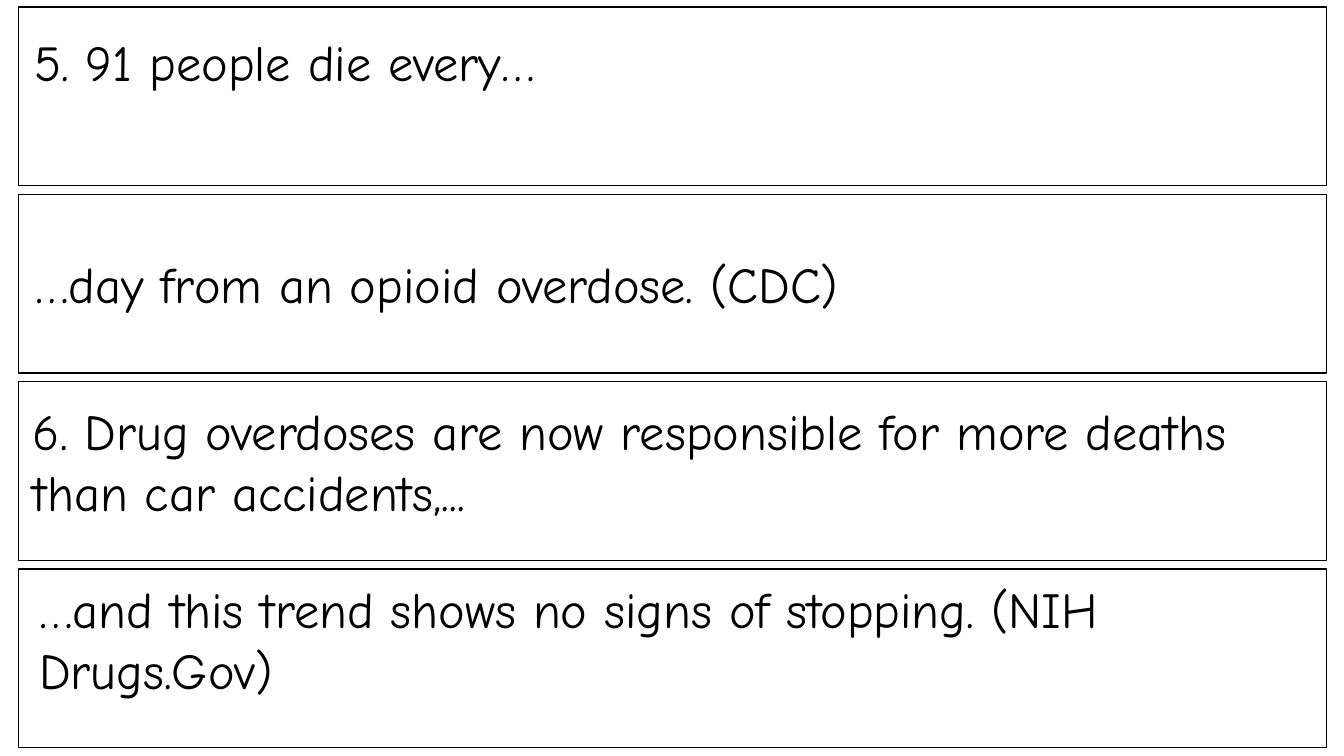
"""Build a slide of four framed fact strips to cut out and match."""
from pptx import Presentation
from pptx.dml.color import RGBColor
from pptx.enum.shapes import MSO_SHAPE
from pptx.enum.text import MSO_AUTO_SIZE
from pptx.util import Cm, Pt

RECT = MSO_SHAPE.RECTANGLE
GROW = MSO_AUTO_SIZE.SHAPE_TO_FIT_TEXT

STRIPS = [
    ("5. 91 people die every…", 0.61, 0.66, 1),
    ("…day from an opioid overdose. (CDC)", 0.64, 6.25, 1),
    ("6. Drug overdoses are now responsible for more deaths "
     "than car accidents,...", 0.58, 9.96, 2),
    ("…and this trend shows no signs of stopping. "
     "(NIH Drugs.Gov)", 0.74, 14.45, 2),
]
COLORS = {"paper": "FFFFFF", "ink": "000000"}
FONT, SIZE = "Comic Neue", 36
LEFT, TOP, WIDTH, HEIGHT, PITCH = 0.46, 0.18, 32.97, 4.5, 4.72
TEXT_WIDTH, LINE, PAD = 32.64, 1.53, 0.27


def color(name):
    return RGBColor.from_string(COLORS[name])


def add_frame(slide, row):
    frame = slide.shapes.add_shape(
        RECT, Cm(LEFT), Cm(TOP + row * PITCH), Cm(WIDTH), Cm(HEIGHT))
    frame.shadow.inherit = False
    frame.fill.solid()
    frame.fill.fore_color.rgb = color("paper")
    frame.line.color.rgb = color("ink")
    frame.line.width = Pt(1)


def add_fact(slide, text, left, top, lines):
    box = slide.shapes.add_textbox(
        Cm(left), Cm(top), Cm(TEXT_WIDTH), Cm(lines * LINE + PAD))
    body = box.text_frame
    body.word_wrap = True
    body.auto_size = GROW
    run = body.paragraphs[0].add_run()
    run.text = text
    run.font.name = FONT
    run.font.size = Pt(SIZE)
    run.font.color.rgb = color("ink")


def main():
    deck = Presentation()
    deck.slide_width, deck.slide_height = Cm(33.87), Cm(19.05)
    slide = deck.slides.add_slide(deck.slide_layouts[6])
    for row in range(len(STRIPS)):
        add_frame(slide, row)
    for strip in STRIPS:
        add_fact(slide, *strip)
    deck.save("out.pptx")


if __name__ == "__main__":
    main()
